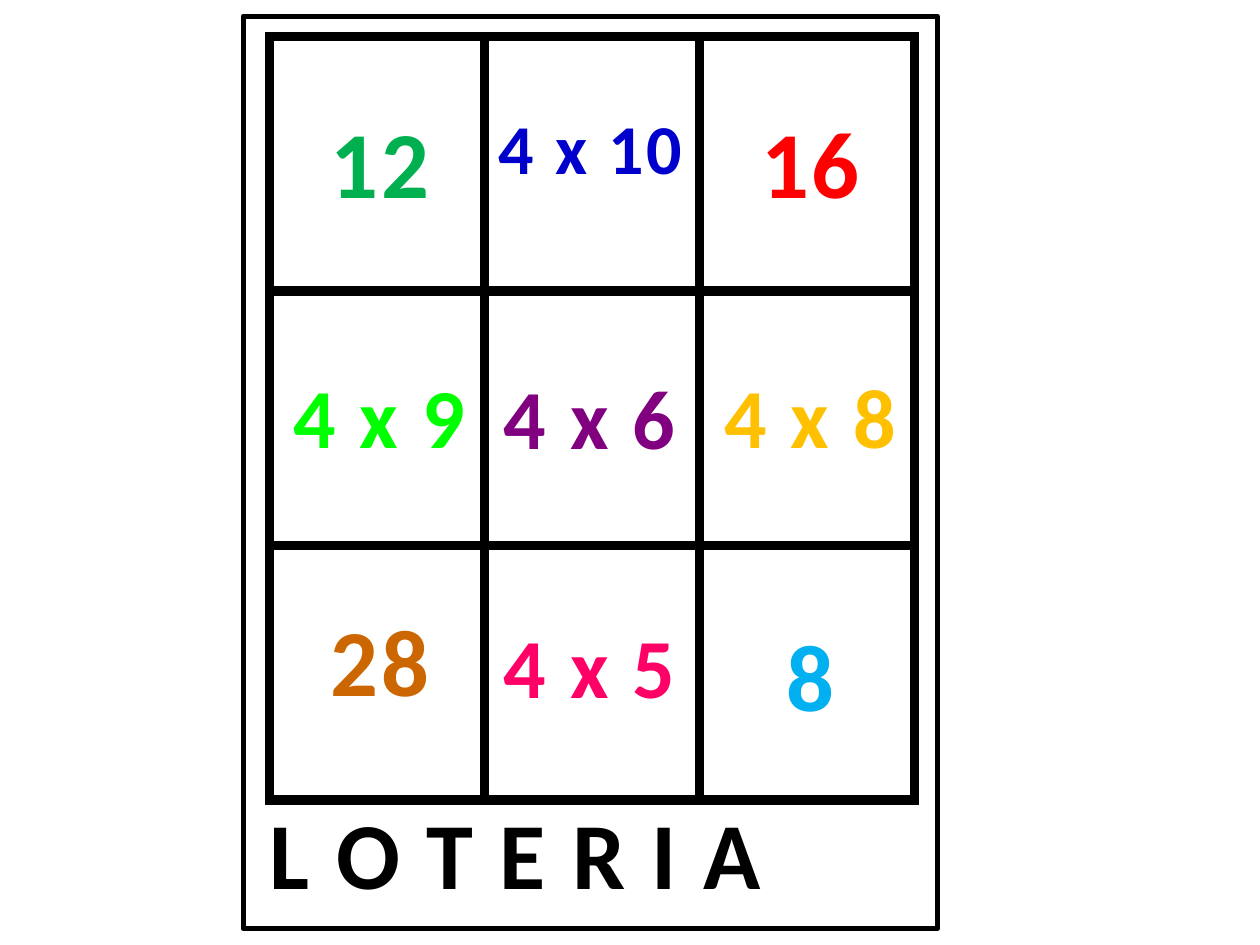
"""Build a lotería card for the four times table."""
from lxml.etree import fromstring
from pptx import Presentation
from pptx.dml.color import RGBColor
from pptx.enum.shapes import MSO_SHAPE as Shape
from pptx.enum.text import MSO_AUTO_SIZE as AutoSize, PP_ALIGN as Align
from pptx.oxml.ns import nsdecls
from pptx.util import Inches, Pt

COLORS = {
    "black": "000000", "pink": "FF0066", "purple": "800080",
    "amber": "FFC000", "lime": "00FF00", "navy": "0000CC",
    "sky": "00B0F0", "green": "00B050", "red": "FF0000", "brown": "CC6600",
}
ENTRIES = [
    ("4 x 5", "pink", 48, 3.88, 4.83, 1.6, 0.91),
    ("4 x 6", "purple", 48, 3.88, 2.85, 1.6, 0.91),
    ("4 x 8", "amber", 48, 5.63, 2.84, 1.6, 0.91),
    ("4 x 9", "lime", 48, 2.21, 2.84, 1.6, 0.91),
    ("4 x 10", "navy", 40, 3.84, 0.78, 1.69, 0.77),
    ("8", "sky", 54, 6.13, 4.85, 0.61, 1.01),
    ("12", "green", 54, 2.51, 0.78, 1.01, 1.01),
    ("16", "red", 54, 5.93, 0.78, 1.01, 1.01),
    ("28", "brown", 54, 2.51, 4.73, 1.01, 1.01),
]


def color(name):
    """Return the named colour."""
    return RGBColor.from_string(COLORS[name])


def add_borders(cell, points):
    """Draw a black border on each side of a cell."""
    properties = cell._tc.get_or_add_tcPr()
    for position, side in enumerate("LRTB"):
        properties.insert(position, fromstring(
            f'<a:ln{side} {nsdecls("a")} w="{Pt(points)}"><a:solidFill>'
            f'<a:srgbClr val="{COLORS["black"]}"/></a:solidFill></a:ln{side}>'))


def add_grid(slide, size=3):
    """Add the empty square grid of the card."""
    grid = slide.shapes.add_table(size, size, Inches(2.14), Inches(0.29),
                                  Inches(5.12), Inches(6.06)).table
    grid.first_row = grid.horz_banding = False
    for row in grid.rows:
        row.height = Inches(2.02)
    for cell in grid.iter_cells():
        cell.fill.background()
        add_borders(cell, 6)


def add_label(slide, text, color_name, size, left, top, width, height):
    """Add a bold, centred, letter-spaced label."""
    label = slide.shapes.add_textbox(*map(Inches, (left, top, width, height)))
    frame = label.text_frame
    frame.word_wrap = False
    frame.auto_size = AutoSize.SHAPE_TO_FIT_TEXT
    paragraph = frame.paragraphs[0]
    paragraph.alignment = Align.CENTER
    run = paragraph.add_run()
    run.text = text
    run._r.get_or_add_rPr().set("spc", "150")
    font = paragraph.font
    font.name, font.size, font.bold = "Calibri", Pt(size), True
    font.color.rgb = color(color_name)


def add_frame(slide):
    """Add the outline of the card."""
    frame = slide.shapes.add_shape(Shape.RECTANGLE, Inches(1.93), Inches(0.13),
                                   Inches(5.51), Inches(7.24))
    frame.shadow.inherit = False
    frame.fill.background()
    frame.line.color.rgb = color("black")
    frame.line.width = Pt(3)


def main():
    """Build and save the card."""
    deck = Presentation()
    deck.slide_width, deck.slide_height = Inches(10), Inches(7.5)
    slide = deck.slides.add_slide(deck.slide_layouts[6])
    add_grid(slide)
    add_label(slide, "L O T E R I A", "black", 54, 2.01, 6.26, 4.17, 1.01)
    add_frame(slide)
    for entry in ENTRIES:
        add_label(slide, *entry)
    deck.save("out.pptx")


if __name__ == "__main__":
    main()
